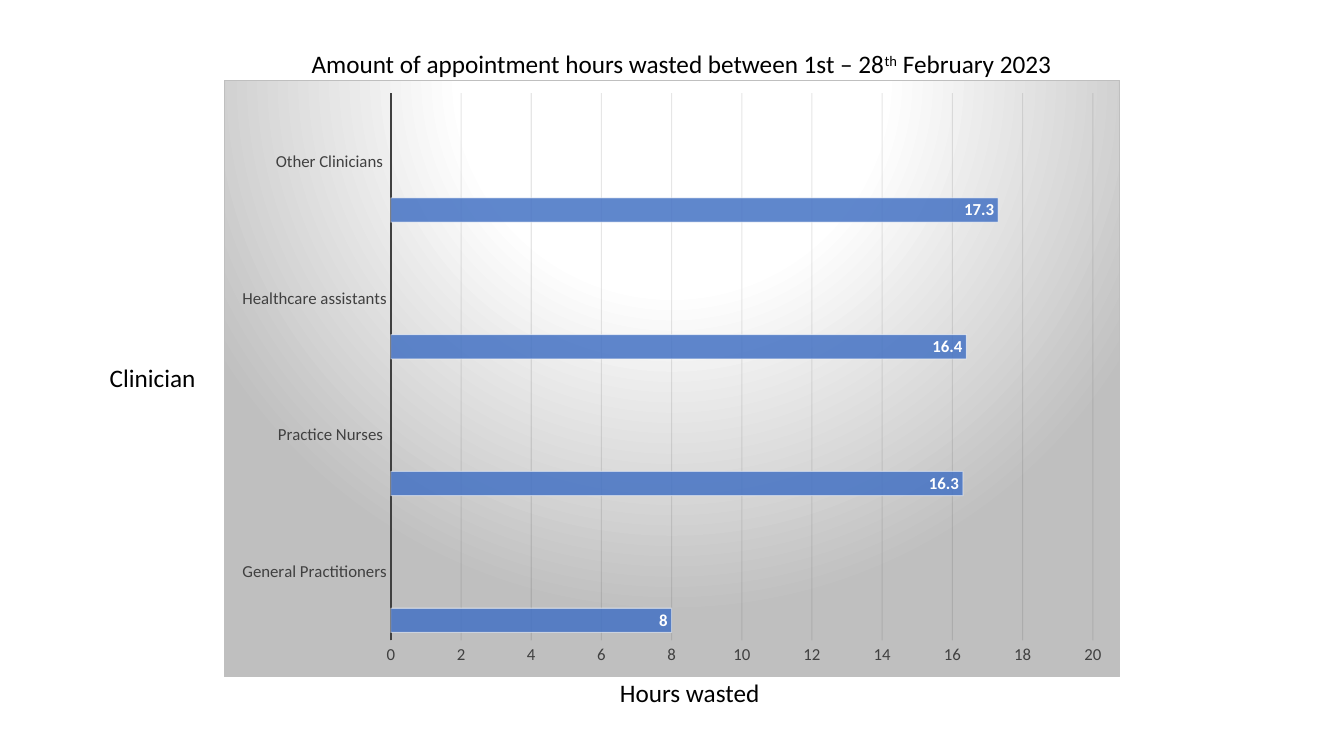
import pptx
import pptx.chart.data
import pptx.dml.color
import pptx.enum.chart
import pptx.enum.text
import pptx.oxml
import pptx.oxml.ns
import pptx.util

PX = 9144  # 100 px to the inch
FONT = "Calibri"
NS = ('xmlns:a="http://schemas.openxmlformats.org/drawingml/2006/main" '
      'xmlns:c="http://schemas.openxmlformats.org/drawingml/2006/chart"')
qn = pptx.oxml.ns.qn


def style(font, size, color, bold=False):
    font.name = FONT
    font.size = pptx.util.Pt(size)
    font.bold = bold
    font.color.rgb = pptx.dml.color.RGBColor.from_string(color)


def paint(fmt, color, alpha=100):
    """Colour a fill or line solidly, with alpha as percent opacity."""
    fill = getattr(fmt, "fill", fmt)
    fill.solid()
    fill.fore_color.rgb = pptx.dml.color.RGBColor.from_string(color)
    if alpha < 100:
        clr = fill._xPr.find(qn("a:solidFill"))[0]
        clr.append(pptx.oxml.parse_xml(f'<a:alpha {NS} val="{alpha * 1000}"/>'))


prs = pptx.Presentation()
prs.slide_width, prs.slide_height = 1333 * PX, 750 * PX
s = prs.slides.add_slide(prs.slide_layouts[5])

# Chart
data = pptx.chart.data.CategoryChartData()
data.categories = ["General Practitioners", "Practice Nurses ",
                   "Healthcare assistants", "Other Clinicians "]
data.add_series("Series 1", [8, 16.3, 16.4, 17.3])
for n in range(2, 6):
    data.add_series(f"Series {n}", [None] * 4)
chart = s.shapes.add_chart(pptx.enum.chart.XL_CHART_TYPE.BAR_CLUSTERED,
                           222 * PX, 79 * PX, 889 * PX, 593 * PX, data).chart
chart.has_title = False
chart.has_legend = False
style(chart.font, 10, "000000")

plot = chart.plots[0]
plot.gap_width = 65
plot.overlap = 0
plot.vary_by_categories = False
for ser, color in zip(plot.series, ["4472C4", "ED7D31", "A5A5A5", "FFC000", "5B9BD5"]):
    paint(ser.format.fill, color, 85)
    ser.format.line.width = pptx.util.Pt(0.75)
    paint(ser.format.line, "FFFFFF", 50)
    labels = ser.data_labels
    labels.show_value = True
    labels.position = pptx.enum.chart.XL_LABEL_POSITION.INSIDE_END
    style(labels.font, 12, "FFFFFF", True)

for axis in (chart.category_axis, chart.value_axis):
    axis.major_tick_mark = axis.minor_tick_mark = pptx.enum.chart.XL_TICK_MARK.NONE
    style(axis.tick_labels.font, 12, "404040")
cat_line = chart.category_axis.format.line
cat_line.width = pptx.util.Pt(1.5)
paint(cat_line, "404040")
val = chart.value_axis
val.minimum_scale, val.maximum_scale, val.major_unit = 0, 20, 2
val.format.line.fill.background()
grid = val.major_gridlines.format.line
grid.width = pptx.util.Pt(0.75)
paint(grid, "0D0D0D", 10)

# Plot position and chart background
area = chart._chartSpace.find(qn("c:chart"))
plot_area = area.find(qn("c:plotArea"))
for old in plot_area.findall(qn("c:layout")):
    plot_area.remove(old)
plot_area.insert(0, pptx.oxml.parse_xml(
    f'<c:layout {NS}><c:manualLayout><c:layoutTarget val="inner"/>'
    '<c:xMode val="edge"/><c:yMode val="edge"/><c:x val="0.186"/><c:y val="0.022"/>'
    '<c:w val="0.784"/><c:h val="0.917"/></c:manualLayout></c:layout>'))
stops = "".join(f'<a:gs pos="{pos * 1000}"><a:srgbClr val="{color}"/></a:gs>'
                for pos, color in [(0, "FFFFFF"), (39, "FFFFFF"), (100, "BFBFBF")])
area.addnext(pptx.oxml.parse_xml(
    f'<c:spPr {NS}><a:gradFill><a:gsLst>{stops}</a:gsLst><a:path path="circle">'
    '<a:fillToRect l="50000" t="-80000" r="50000" b="180000"/></a:path></a:gradFill>'
    '<a:ln w="9525"><a:solidFill><a:srgbClr val="BFBFBF"/></a:solidFill></a:ln></c:spPr>'))

# Title and axis captions
title = s.shapes.title
title.left, title.top, title.width, title.height = 299 * PX, 43 * PX, 812 * PX, 101 * PX
tf = title.text_frame
tf.auto_size = pptx.enum.text.MSO_AUTO_SIZE.NONE
tf.vertical_anchor = pptx.enum.text.MSO_ANCHOR.TOP
p = tf.paragraphs[0]
p.alignment = pptx.enum.text.PP_ALIGN.LEFT
for text in ["Amount of appointment hours wasted between 1st – 28", "th", " February 2023"]:
    r = p.add_run()
    r.text = text
    style(r.font, 18, "000000")
p.runs[1].font._element.set("baseline", "30000")

for text, x, y, w in [("Hours wasted", 605, 667, 178), ("Clinician", 99, 355, 133)]:
    tf = s.shapes.add_textbox(x * PX, y * PX, w * PX, 40 * PX).text_frame
    tf.word_wrap = True
    tf.text = text
    style(tf.paragraphs[0].runs[0].font, 18, "000000")

prs.save("out.pptx")
